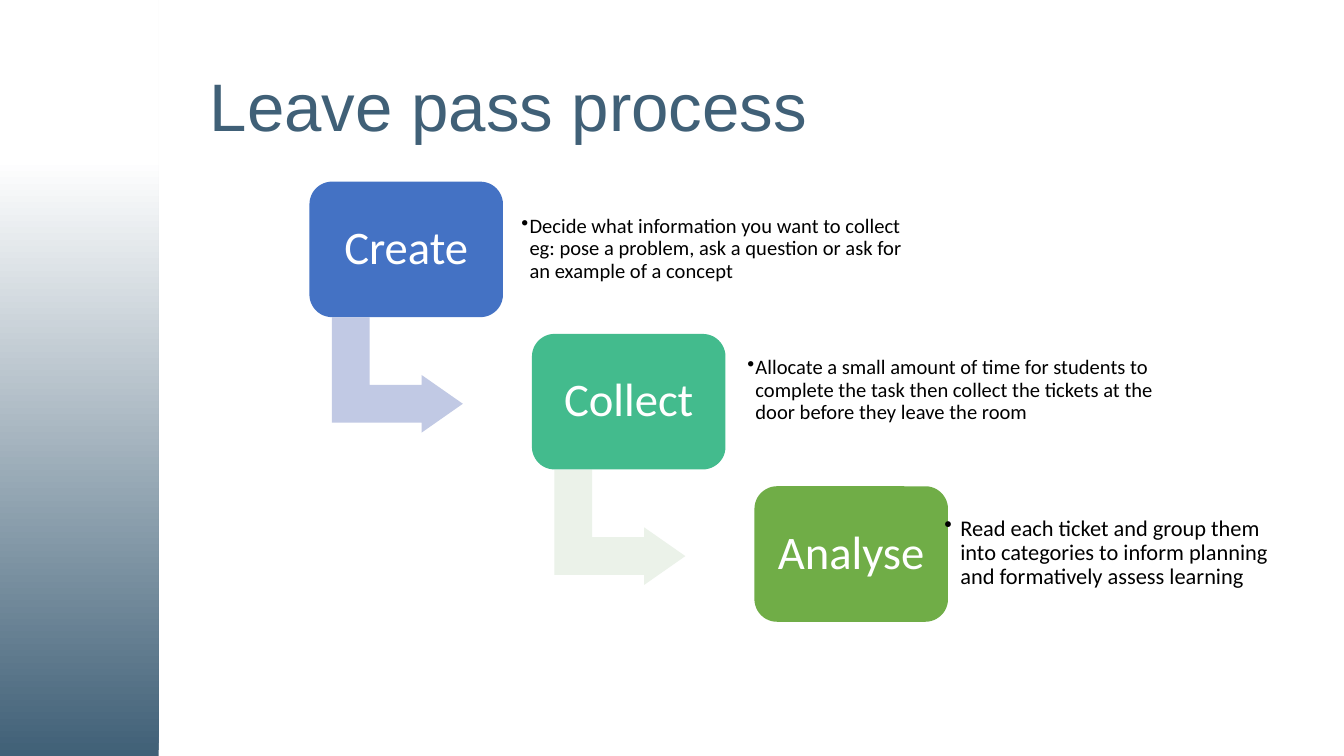
"""Build the leave pass process slide with three descending steps."""
from lxml import etree
from pptx import Presentation
from pptx import util as u
from pptx.dml import color
from pptx.enum import shapes, text
from pptx.oxml import ns

Pt = u.Pt


def rgb(value):
    return color.RGBColor.from_string(value)


def add_block(kind, left, top, width, height, fill):
    shape = slide.shapes.add_shape(kind, Pt(left), Pt(top), Pt(width), Pt(height))
    shape.shadow.inherit = False
    shape.line.fill.background()
    shape.fill.solid()
    shape.fill.fore_color.rgb = rgb(fill)
    return shape


presentation = Presentation()
presentation.slide_width, presentation.slide_height = Pt(720), Pt(405)
slide = presentation.slides.add_slide(presentation.slide_layouts[5])

band = add_block(shapes.MSO_SHAPE.RECTANGLE, 0, 0, 85, 405, "FFFFFF")
band.fill.gradient()
band.fill.gradient_angle = 90
for stop, (position, shade) in zip(band.fill.gradient_stops, [(0, "406077"), (0.79, "FFFFFF")]):
    stop.position = position
    stop.color.rgb = rgb(shade)

title = slide.shapes.title
title.left, title.top, title.width, title.height = Pt(105.1), Pt(21.6), Pt(520.6), Pt(74.2)
title.text_frame.text = "Leave pass process"
title.text_frame.vertical_anchor = text.MSO_ANCHOR.MIDDLE
paragraph = title.text_frame.paragraphs[0]
paragraph.alignment = text.PP_ALIGN.LEFT
paragraph.line_spacing = 0.9
paragraph.font.name, paragraph.font.size = "Arial", Pt(36)
paragraph.font.color.rgb = rgb("406077")

steps = [
    ("Create", "4472C4", "C1C9E4",
     "Decide what information you want to collect eg: pose a problem, ask a question "
     "or ask for an example of a concept", (275, 104.4, 213.8), 4.3, 11),
    ("Collect", "43BB8D", "EBF2E9",
     "Allocate a small amount of time for students to complete the task then collect "
     "the tickets at the door before they leave the room", (396, 180, 226.8), 4.3, 11),
    ("Analyse", "70AD47", None,
     "Read each ticket and group them into categories to inform planning and "
     "formatively assess learning", (501.1, 267.1, 191.5), 8.6, 12),
]

for index, (name, fill, arrow_fill, detail, place, indent, size) in enumerate(steps):
    left, top = 165.8 + 119.2 * index, 97.3 + 81.6 * index
    if arrow_fill:
        arrow = add_block(shapes.MSO_SHAPE.BENT_UP_ARROW, left + 16.2, top + 68.5, 61.7, 70.2, arrow_fill)
        arrow.rotation = 90
        for position, value in enumerate((0.328, 0.25, 0.358)):
            arrow.adjustments[position] = value

    box = add_block(shapes.MSO_SHAPE.ROUNDED_RECTANGLE, left, top, 103.7, 72.6, fill)
    box.adjustments[0] = 0.167
    box.text_frame.text = name
    box.text_frame.vertical_anchor = text.MSO_ANCHOR.MIDDLE
    paragraph = box.text_frame.paragraphs[0]
    paragraph.alignment = text.PP_ALIGN.CENTER
    paragraph.line_spacing = 0.9
    paragraph.font.name, paragraph.font.size = "Calibri", Pt(25)
    paragraph.font.color.rgb = rgb("FFFFFF")

    note_left, note_top, note_width = place
    note = slide.shapes.add_textbox(Pt(note_left), Pt(note_top), Pt(note_width), Pt(58.3))
    frame = note.text_frame
    frame.word_wrap = True
    frame.vertical_anchor = text.MSO_ANCHOR.MIDDLE
    frame.margin_left = frame.margin_right = frame.margin_top = frame.margin_bottom = Pt(size * 0.4)
    frame.text = detail
    paragraph = frame.paragraphs[0]
    paragraph.level = 1
    paragraph.line_spacing = 0.9
    properties = paragraph._p.get_or_add_pPr()
    properties.set("marL", str(Pt(indent)))
    properties.set("indent", str(-Pt(indent)))
    etree.SubElement(properties, ns.qn("a:buChar")).set("char", "•")
    paragraph.font.name, paragraph.font.size = "Calibri", Pt(size)
    paragraph.font.color.rgb = rgb("000000")

presentation.save("out.pptx")
